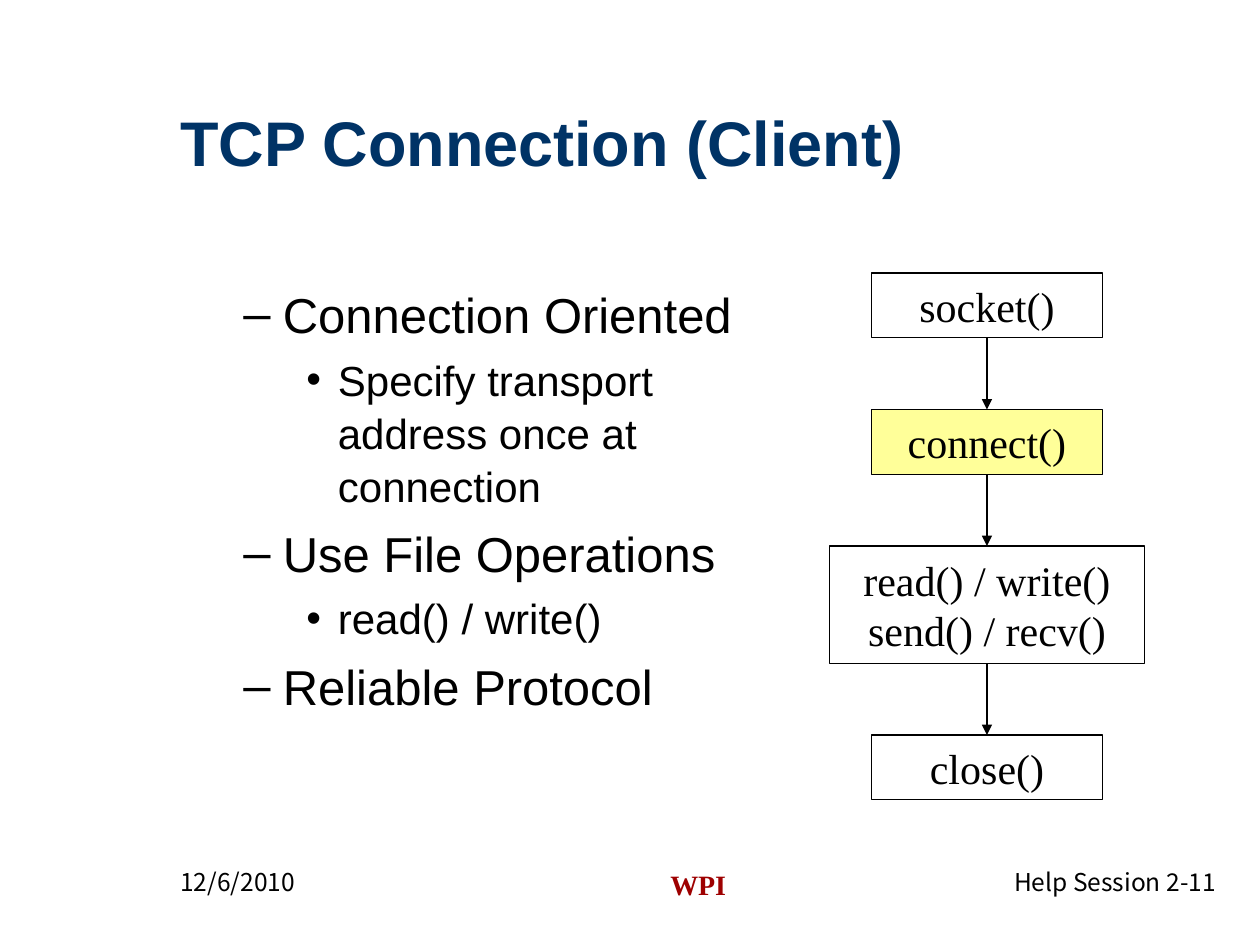
from dataclasses import dataclass

from lxml.etree import SubElement
from pptx import Presentation
from pptx.dml.color import RGBColor
from pptx.enum.shapes import MSO_CONNECTOR, MSO_SHAPE
from pptx.enum.text import MSO_ANCHOR, PP_ALIGN
from pptx.oxml.ns import qn
from pptx.util import Pt


@dataclass(frozen=True)
class Theme:
    black: str = "000000"
    navy: str = "003366"
    red: str = "9E0000"
    yellow: str = "FFFF99"
    sans: str = "Arial"
    serif: str = "Times New Roman"
    foot: str = "Noto Sans CJK KR"
    title: int = 36
    head: int = 28
    item: int = 24
    mark: int = 16
    small: int = 14


class Deck:
    def __init__(self, slide, theme):
        self.slide = slide
        self.theme = theme

    def font(self, para, name, size, color, bold=False):
        font = para.font
        font.name = name
        font.size = Pt(size)
        font.bold = bold
        font.color.rgb = RGBColor.from_string(color)

    def frame(self, x, y, w, h):
        box = self.slide.shapes.add_textbox(Pt(x), Pt(y), Pt(w), Pt(h))
        box.text_frame.word_wrap = True
        return box.text_frame

    def text(self, place, words, name, size, color, bold=False,
             align=PP_ALIGN.LEFT, anchor=MSO_ANCHOR.TOP):
        frame = self.frame(*place)
        frame.vertical_anchor = anchor
        para = frame.paragraphs[0]
        para.text = words
        para.alignment = align
        self.font(para, name, size, color, bold)

    def bullets(self, place, items):
        theme = self.theme
        styles = {1: ("–", 58.5, -22.5, theme.head),
                  2: ("•", 90, -18, theme.item)}
        frame = self.frame(*place)
        frame.margin_top = Pt(5)
        for i, (level, words) in enumerate(items):
            mark, left, hang, size = styles[level]
            para = frame.add_paragraph() if i else frame.paragraphs[0]
            para.text = words
            para.level = level
            para.line_spacing = 1.05
            if i:
                para.space_before = Pt(size * 0.2)
            props = para._p.get_or_add_pPr()
            props.set("marL", str(Pt(left)))
            props.set("indent", str(Pt(hang)))
            SubElement(props, qn("a:buFont"), typeface=theme.sans)
            SubElement(props, qn("a:buChar"), char=mark)
            self.font(para, theme.sans, size, theme.black)

    def box(self, x, y, w, h, lines, fill=None):
        theme = self.theme
        shape = self.slide.shapes.add_shape(
            MSO_SHAPE.RECTANGLE, Pt(x), Pt(y), Pt(w), Pt(h))
        shape.shadow.inherit = False
        if fill:
            shape.fill.solid()
            shape.fill.fore_color.rgb = RGBColor.from_string(fill)
        else:
            shape.fill.background()
        self.stroke(shape.line)
        frame = shape.text_frame
        frame.word_wrap = True
        frame.vertical_anchor = MSO_ANCHOR.MIDDLE
        for i, words in enumerate(lines):
            para = frame.add_paragraph() if i else frame.paragraphs[0]
            para.text = words
            para.alignment = PP_ALIGN.CENTER
            self.font(para, theme.serif, theme.item, theme.black)
        return shape

    def stroke(self, line):
        line.width = Pt(0.75)
        line.color.rgb = RGBColor.from_string(self.theme.black)

    def arrow(self, start, end):
        link = self.slide.shapes.add_connector(
            MSO_CONNECTOR.STRAIGHT, 0, 0, 0, 0)
        link.begin_connect(start, 2)
        link.end_connect(end, 0)
        self.stroke(link.line)
        SubElement(link.line._get_or_add_ln(), qn("a:tailEnd"), type="triangle")
        SubElement(link._element.spPr, qn("a:effectLst"))


def main():
    show = Presentation()
    show.slide_width, show.slide_height = Pt(720), Pt(540)
    theme = Theme()
    deck = Deck(show.slides.add_slide(show.slide_layouts[6]), theme)

    deck.text((96, 36, 594, 90), "TCP Connection (Client)", theme.sans,
              theme.title, theme.navy, True, anchor=MSO_ANCHOR.MIDDLE)
    deck.bullets((96, 156, 372, 324), [
        (1, "Connection Oriented"),
        (2, "Specify transport address once at connection"),
        (1, "Use File Operations"),
        (2, "read() / write()"),
        (1, "Reliable Protocol"),
    ])

    steps = [
        (132, 37, ["socket()"], None),
        (132, 37, ["connect()"], theme.yellow),
        (180, 67, ["read() / write()", "send() / recv()"], None),
        (132, 37, ["close()"], None),
    ]
    mid, top, gap = 564, 156, 41
    last = None
    for wide, high, lines, fill in steps:
        step = deck.box(mid - wide / 2, top, wide, high, lines, fill)
        if last:
            deck.arrow(last, step)
        last = step
        top += high + gap

    foot = 492
    deck.text((96, foot, 150, 36), "12/6/2010", theme.foot,
              theme.small, theme.black)
    deck.text((288, foot, 222, 36), "WPI", theme.serif, theme.mark,
              theme.red, True, PP_ALIGN.CENTER)
    deck.text((552, foot, 150, 36), "Help Session 2-11", theme.foot,
              theme.small, theme.black, align=PP_ALIGN.RIGHT)
    show.save("out.pptx")


if __name__ == "__main__":
    main()
